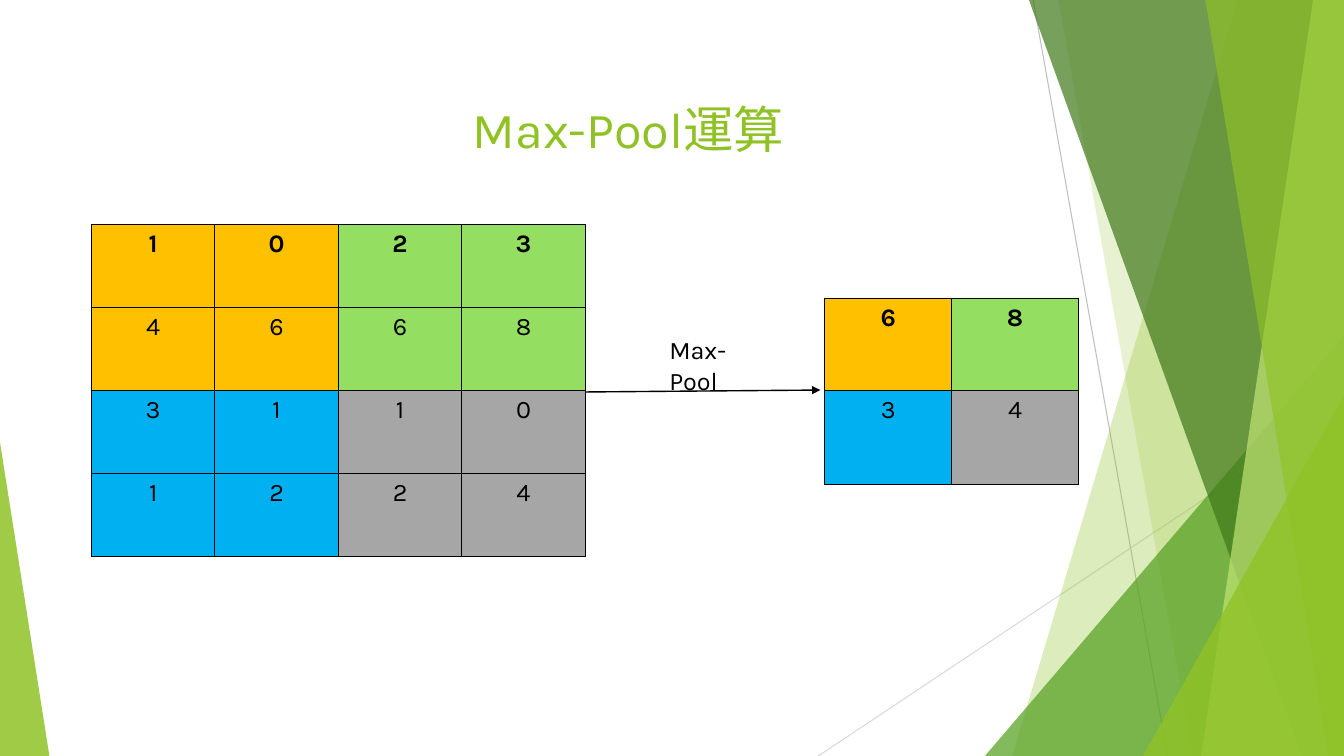
from dataclasses import dataclass

from lxml.etree import SubElement
from pptx import Presentation
from pptx.dml.color import RGBColor
from pptx.enum.shapes import MSO_CONNECTOR as CONN, MSO_SHAPE as SHAPE
from pptx.enum.text import MSO_ANCHOR as ANCHOR, MSO_AUTO_SIZE as AUTO, PP_ALIGN as ALIGN
from pptx.oxml.ns import qn
from pptx.util import Pt

W, H = 960, 540


@dataclass(frozen=True)
class Theme:
    font: str = "Karla"
    title_size: int = 36
    body_size: int = 18
    ink: str = "000000"
    accent: str = "90C226"
    leaf: str = "54A021"
    forest: str = "3F7819"
    lime: str = "C0E474"
    rule_dark: str = "BFBFBF"
    rule_light: str = "D9D9D9"
    # One colour per pooling window, as a 2 x 2 grid
    windows: tuple = (("FFC000", "94DE61"), ("00B0F0", "A6A6A6"))


class Deck:
    """Theme and current slide, with one method per kind of element; lengths in points."""

    def __init__(self, theme):
        self.theme = theme
        self.prs = Presentation()
        self.prs.slide_width, self.prs.slide_height = Pt(W), Pt(H)
        self.slide = self.prs.slides.add_slide(self.prs.slide_layouts[5])
        self.shapes = self.slide.shapes

    def run(self, p, text, size, color, bold=False):
        r = p.add_run()
        r.text = text
        r.font.name, r.font.size, r.font.bold = self.theme.font, Pt(size), bold
        r.font.color.rgb = RGBColor.from_string(color)

    def title(self, text, x, y, w, h):
        sp = self.shapes.title
        self.shapes._spTree.append(sp._element)  # bring in front of the backdrop
        sp.left, sp.top, sp.width, sp.height = map(Pt, (x, y, w, h))
        tf = sp.text_frame
        tf.vertical_anchor, tf.word_wrap = ANCHOR.TOP, True
        p = tf.paragraphs[0]
        p.alignment = ALIGN.CENTER
        self.run(p, text, self.theme.title_size, self.theme.accent)

    def label(self, text, x, y, w, h):
        tf = self.shapes.add_textbox(*map(Pt, (x, y, w, h))).text_frame
        tf.word_wrap, tf.auto_size = True, AUTO.SHAPE_TO_FIT_TEXT
        self.run(tf.paragraphs[0], text, self.theme.body_size, self.theme.ink)

    def line(self, start, end, color, width, arrow=False):
        c = self.shapes.add_connector(CONN.STRAIGHT, *map(Pt, start + end))
        c.line.color.rgb = RGBColor.from_string(color)
        c.line.width = Pt(width)
        if arrow:
            SubElement(c.line._get_or_add_ln(), qn("a:tailEnd"), type="triangle")
        SubElement(c._element.spPr, qn("a:effectLst"))

    def paint(self, sp, color, opacity):
        """Fill without outline or shadow; opacity is in percent."""
        sp.shadow.inherit = False
        sp.line.fill.background()
        sp.fill.solid()
        sp.fill.fore_color.rgb = RGBColor.from_string(color)
        clr = sp._element.spPr.find(qn("a:solidFill"))[0]
        SubElement(clr, qn("a:alpha"), val=str(opacity * 1000))

    def band(self, top_left, bottom_left, color, opacity):
        """Full-height panel from a slanted left edge to the slide's right edge."""
        fb = self.shapes.build_freeform(top_left, 0, scale=Pt(1))
        fb.add_line_segments([(W, 0), (W, H), (bottom_left, H)], close=True)
        self.paint(fb.convert_to_shape(), color, opacity)

    def corner(self, x, y, w, apex, color, opacity):
        """Right triangle standing on the slide's bottom edge."""
        sp = self.shapes.add_shape(SHAPE.ISOSCELES_TRIANGLE, *map(Pt, (x, y, w, H - y)))
        sp.adjustments[0] = apex
        self.paint(sp, color, opacity)

    def matrix(self, values, x, y, col_w, row_heights):
        """Square table whose four quadrants take the window colours."""
        n = len(values)
        frame = self.shapes.add_table(n, n, *map(Pt, (x, y, n * col_w, sum(row_heights))))
        table = frame.table
        table.horz_banding = table.first_row = False
        for col in table.columns:
            col.width = Pt(col_w)
        for i, height in enumerate(row_heights):
            table.rows[i].height = Pt(height)
            for j, value in enumerate(values[i]):
                cell = table.cell(i, j)
                self.border(cell)
                cell.fill.solid()
                color = self.theme.windows[2 * i // n][2 * j // n]
                cell.fill.fore_color.rgb = RGBColor.from_string(color)
                p = cell.text_frame.paragraphs[0]
                p.alignment = ALIGN.CENTER
                self.run(p, str(value), self.theme.body_size, self.theme.ink, bold=i == 0)

    def border(self, cell):
        tc_pr = cell._tc.get_or_add_tcPr()
        for side in ("lnL", "lnR", "lnT", "lnB"):
            ln = SubElement(tc_pr, qn(f"a:{side}"), w=str(Pt(1)))
            fill = SubElement(ln, qn("a:solidFill"))
            SubElement(fill, qn("a:srgbClr"), val=self.theme.ink)


def max_pool(m):
    """Largest value of each 2 x 2 window."""
    steps = range(0, len(m), 2)
    return [[max(m[i][j:j + 2] + m[i + 1][j:j + 2]) for j in steps] for i in steps]


def backdrop(deck):
    t = deck.theme
    deck.line((738, 0), (834, H), t.rule_dark, 0.75)
    deck.line((W, 290), (584.5, H), t.rule_light, 0.75)
    deck.band(884, 723, t.accent, 30)
    deck.band(756, 852, t.accent, 20)
    deck.corner(703.5, 240, 256.5, 1, t.leaf, 72)
    deck.band(735, 929.5, t.forest, 70)
    deck.band(938, 858, t.lime, 70)
    deck.band(861, 949, t.accent, 65)
    deck.corner(816.5, 283, 143.5, 1, t.accent, 80)
    deck.corner(0, 316, 35.3, 0, t.accent, 85)


def main():
    deck = Deck(Theme())
    backdrop(deck)
    deck.title("Max-Pool運算", 143.3, 66.2, 611.3, 85.7)
    deck.label("Max-Pool", 471, 235.5, 88, 29)
    feature_map = [[1, 0, 2, 3], [4, 6, 6, 8], [3, 1, 1, 0], [1, 2, 2, 4]]
    deck.matrix(feature_map, 65.3, 160.5, 88.2, [59.2] * 4)
    deck.matrix(max_pool(feature_map), 589.2, 213.2, 90.6, [65.8, 67.2])
    deck.line((418.3, 280), (586, 278.6), deck.theme.ink, 1, arrow=True)
    deck.prs.save("out.pptx")


if __name__ == "__main__":
    main()
